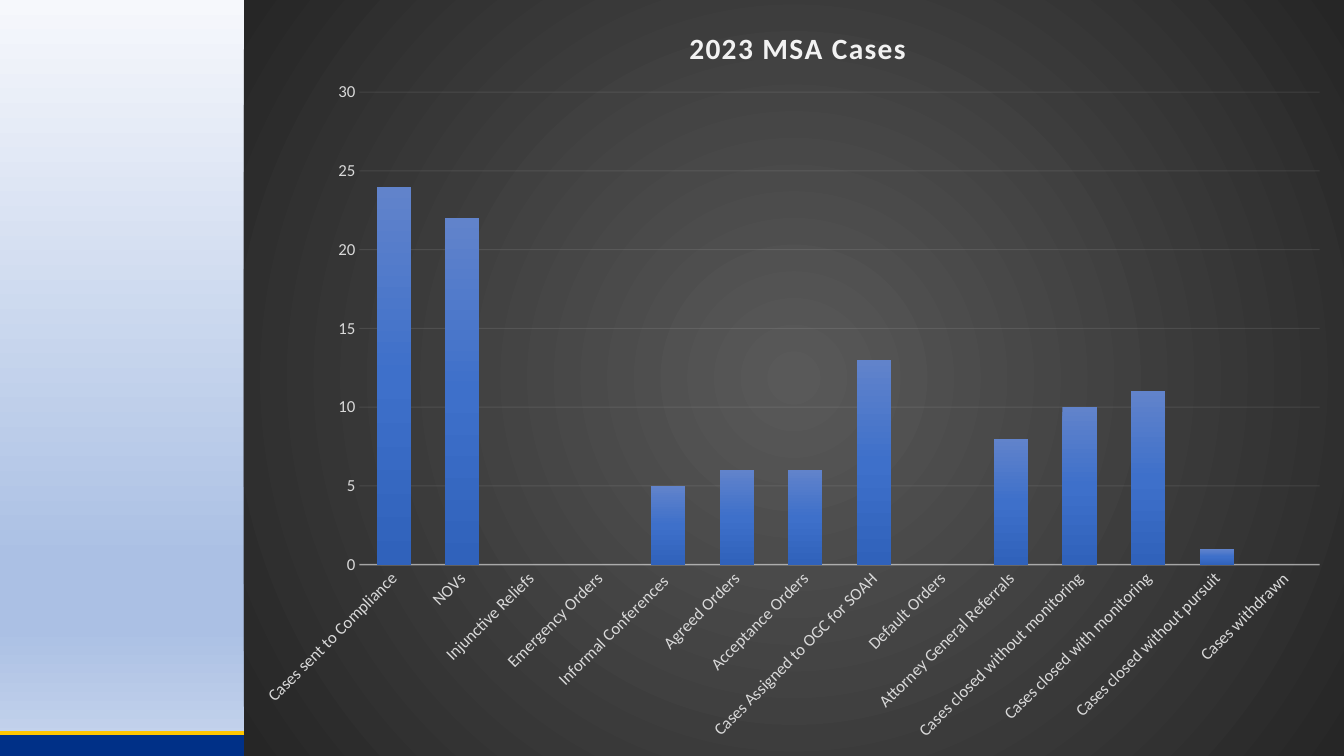
"""Build the 2023 MSA Cases column chart slide."""
from typing import Any, NamedTuple

import lxml.etree
import pptx
import pptx.chart.data
import pptx.dml.color
import pptx.enum.chart
import pptx.enum.shapes
import pptx.oxml
import pptx.oxml.ns
import pptx.util

W, H = pptx.util.Inches(13.33), pptx.util.Inches(7.5)
SIDE, FOOT = 0.1815, 0.97
FONT, LABEL, PALE = "Calibri", "D9D9D9", "F2F2F2"
qn = pptx.oxml.ns.qn


class Case(NamedTuple):
    """One column of the chart."""
    name: str
    count: int


class Gradient(NamedTuple):
    """Colour stops in percent, running downwards or outwards from the centre."""
    stops: list[tuple[int, str]]
    radial: bool = False


CASES = [
    Case("Cases sent to Compliance", 24),
    Case("NOVs", 22),
    Case("Injunctive Reliefs", 0),
    Case("Emergency Orders", 0),
    Case("Informal Conferences ", 5),
    Case("Agreed Orders", 6),
    Case("Acceptance Orders", 6),
    Case("Cases Assigned to OGC for SOAH", 13),
    Case("Default Orders", 0),
    Case("Attorney General Referrals", 8),
    Case("Cases closed without monitoring", 10),
    Case("Cases closed with monitoring", 11),
    Case("Cases closed without pursuit", 1),
    Case("Cases withdrawn", 0),
]
SKY = Gradient([(0, "F6F8FC"), (74, "ABC0E4"), (83, "ABC0E4"), (100, "C7D5ED")])
BARS = Gradient([(0, "6183CB"), (50, "3E70CA"), (100, "3062BB")])
PANEL = Gradient([(0, "595959"), (100, "262626")], radial=True)


def rgb(value: str) -> pptx.dml.color.RGBColor:
    """Return the colour for a hex string."""
    return pptx.dml.color.RGBColor.from_string(value)


def sub(parent: Any, tag: str, **attrs: Any) -> Any:
    """Append a child element with the given attributes."""
    return lxml.etree.SubElement(parent, qn(tag), {k: str(v) for k, v in attrs.items()})


def gradient_xml(gradient: Gradient) -> Any:
    """Return the gradient as a fill element."""
    fill = pptx.oxml.parse_xml(f"<a:gradFill {pptx.oxml.ns.nsdecls('a')}/>")
    stops = sub(fill, "a:gsLst")
    for pos, color in gradient.stops:
        sub(sub(stops, "a:gs", pos=pos * 1000), "a:srgbClr", val=color)
    if gradient.radial:
        path = sub(fill, "a:path", path="circle")
        sub(path, "a:fillToRect", l=50000, t=50000, r=50000, b=50000)
    else:
        sub(fill, "a:lin", ang=5400000, scaled=0)
    return fill


def set_layout(parent: Any, index: int, inner: bool = False, **shares: float) -> None:
    """Place a chart part by shares of the chart's size."""
    for old in parent.findall(qn("c:layout")):
        parent.remove(old)
    layout = pptx.oxml.parse_xml(f"<c:layout {pptx.oxml.ns.nsdecls('c')}/>")
    manual = sub(layout, "c:manualLayout")
    if inner:
        sub(manual, "c:layoutTarget", val="inner")
    for mode in ("xMode", "yMode"):
        sub(manual, f"c:{mode}", val="edge")
    for key, share in shares.items():
        sub(manual, f"c:{key}", val=share)
    parent.insert(index, layout)


def set_font(font: Any, size: float, color: str, bold: bool = False) -> None:
    """Format a font."""
    font.name, font.size, font.bold = FONT, pptx.util.Pt(size), bold
    font.color.rgb = rgb(color)


def set_line(line: Any, width: float, color: str, opacity: int = 100) -> None:
    """Format a line, with its opacity in percent."""
    line.width = pptx.util.Pt(width)
    line.fill.solid()
    line.color.rgb = rgb(color)
    if opacity < 100:
        clr = line.fill._xPr.find(f".//{qn('a:srgbClr')}")
        sub(clr, "a:alpha", val=opacity * 1000)


def add_footer(slide: Any) -> None:
    """Draw the blue band and its gold edge."""
    top, right = int(H * FOOT), int(W * SIDE)
    band = slide.shapes.add_shape(
        pptx.enum.shapes.MSO_SHAPE.RECTANGLE, 0, top, right, H - top)
    band.shadow.inherit = False
    band.fill.solid()
    band.fill.fore_color.rgb = rgb("003087")
    band.line.fill.background()
    edge = slide.shapes.add_connector(
        pptx.enum.shapes.MSO_CONNECTOR.STRAIGHT, 0, top, right, top)
    set_line(edge.line, 3, "FFC600")
    sub(edge._element.spPr, "a:effectLst")


def add_title(chart: Any, text: str) -> None:
    """Write the chart title."""
    chart.has_title = True
    title = chart.chart_title
    title.include_in_layout = False
    p = title.text_frame.paragraphs[0]
    p.text = text
    r = p.runs[0]
    set_font(r.font, 21, PALE, bold=True)
    r._r.get_or_add_rPr().set("spc", "100")
    set_layout(title._element, 1, x=0.4, y=0.03)


def style_axes(chart: Any) -> None:
    """Format both axes, their labels and the gridlines."""
    for axis in (chart.category_axis, chart.value_axis):
        axis.major_tick_mark = pptx.enum.chart.XL_TICK_MARK.NONE
        axis.minor_tick_mark = pptx.enum.chart.XL_TICK_MARK.NONE
        set_font(axis.tick_labels.font, 12, LABEL)
    cats, vals = chart.category_axis, chart.value_axis
    cats.has_major_gridlines = False
    set_line(cats.format.line, 1, PALE, 54)
    cats._element.find(f".//{qn('a:bodyPr')}").set("rot", "-2700000")
    vals.minimum_scale, vals.maximum_scale, vals.major_unit = 0, 30, 5
    vals.format.line.fill.background()
    set_line(vals.major_gridlines.format.line, 0.75, PALE, 10)


def add_cases_chart(slide: Any) -> None:
    """Draw the column chart on its dark panel."""
    data = pptx.chart.data.CategoryChartData()
    data.categories = [case.name for case in CASES]
    data.add_series("Series 1", [case.count for case in CASES])
    left = int(W * SIDE)
    chart = slide.shapes.add_chart(
        pptx.enum.chart.XL_CHART_TYPE.COLUMN_CLUSTERED, left, 0, W - left, H, data).chart
    chart.has_legend = False
    set_font(chart.font, 10, "000000")
    add_title(chart, "2023 MSA Cases")
    style_axes(chart)

    plot = chart.plots[0]
    plot.gap_width, plot.overlap, plot.vary_by_categories = 100, -24, False
    bars = plot.series[0]
    bars.invert_if_negative = False
    bars.format.line.fill.background()
    bars._element.find(qn("c:spPr")).insert(0, gradient_xml(BARS))

    space = chart._chartSpace
    set_layout(space.find(f".//{qn('c:plotArea')}"), 0, inner=True,
               x=0.105, y=0.122, w=0.873, h=0.625)
    panel = pptx.oxml.parse_xml(f"<c:spPr {pptx.oxml.ns.nsdecls('c', 'a')}/>")
    panel.append(gradient_xml(PANEL))
    sub(sub(panel, "a:ln"), "a:noFill")
    space.find(qn("c:txPr")).addprevious(panel)


def main() -> None:
    """Build and save the slide."""
    prs = pptx.Presentation()
    prs.slide_width, prs.slide_height = W, H
    s = prs.slides.add_slide(prs.slide_layouts[6])
    s.background.fill.gradient()
    old = s._element.find(f".//{qn('a:gradFill')}")
    old.getparent().replace(old, gradient_xml(SKY))
    add_footer(s)
    add_cases_chart(s)
    prs.save("out.pptx")


if __name__ == "__main__":
    main()
